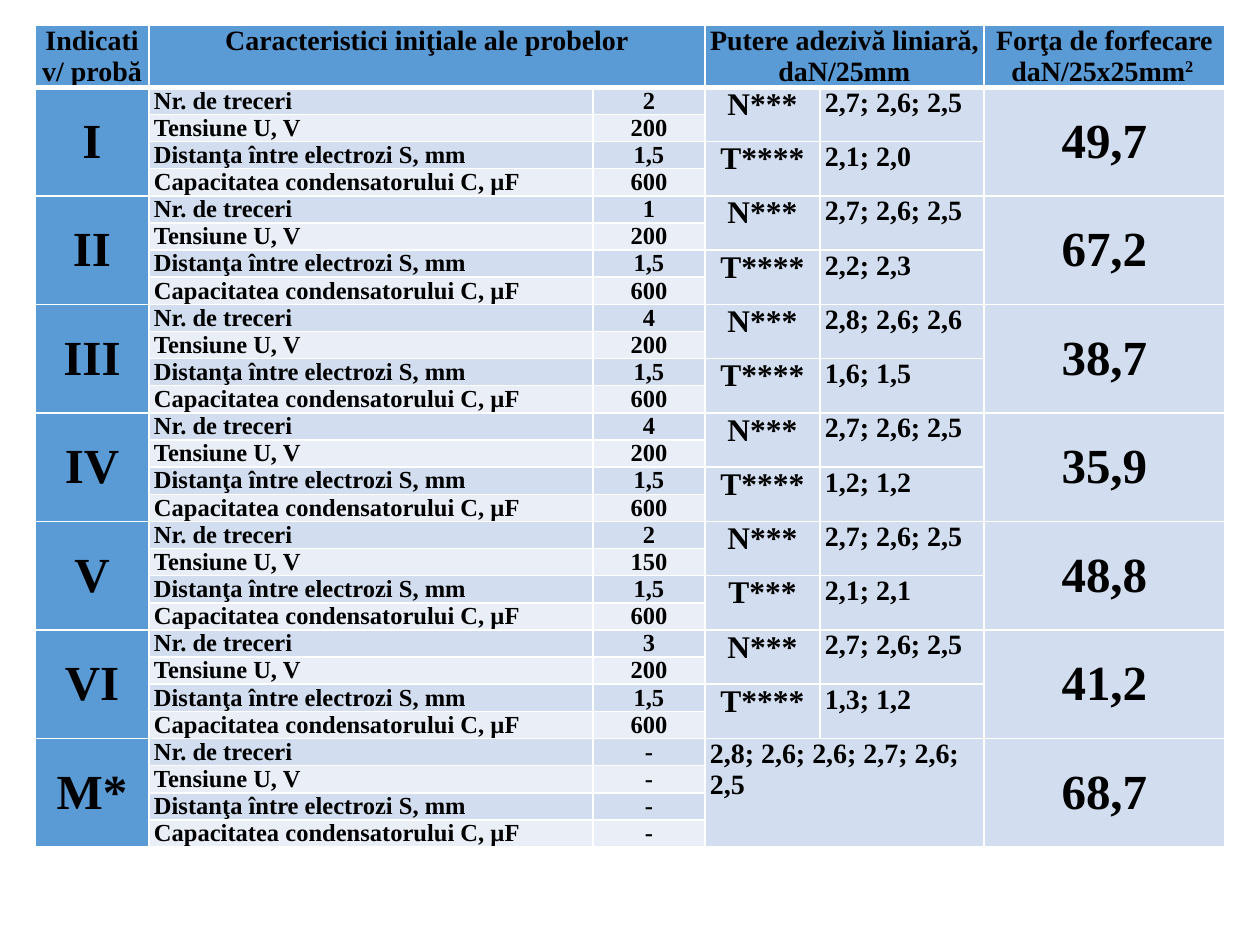
from dataclasses import dataclass, field

from lxml import etree
from pptx import Presentation
from pptx import util as u
from pptx.dml import color
from pptx.enum import text
from pptx.oxml import ns

PX = 914400 // 126
LEFT, TOP, HIGH = 35, 25, 891
COLS = (114, 444, 112, 115, 164, 241)
HEAD_ROW, ROW, STEP = 48, 16, 4
PAD = 5


@dataclass(frozen=True)
class Theme:
    font: str = "Times New Roman"
    ink: str = "000000"
    line: str = "FFFFFF"
    head: str = "5B9BD5"
    bands: tuple = ("D2DEEF", "EAEFF7")
    small: int = 14
    mid: int = 16
    code: int = 18
    big: int = 28


@dataclass(frozen=True)
class Look:
    size: int
    fill: str
    align: text.PP_ALIGN = text.PP_ALIGN.CENTER
    anchor: text.MSO_ANCHOR = text.MSO_ANCHOR.TOP


@dataclass(frozen=True)
class Probe:
    name: str
    passes: str
    force: str
    normal: str
    cross: str = ""
    mark: str = "T****"
    rest: tuple = field(default=("200", "1,5", "600"))


THEME = Theme()
MIDDLE = text.MSO_ANCHOR.MIDDLE
HEAD = Look(THEME.mid, THEME.head)
NAME = Look(THEME.big, THEME.head, anchor=MIDDLE)
FORCE = Look(THEME.big, THEME.bands[0], anchor=MIDDLE)
CODE = Look(THEME.code, THEME.bands[0])
LIST = Look(THEME.mid, THEME.bands[0], text.PP_ALIGN.LEFT)

TRAITS = (
    "Nr. de treceri",
    "Tensiune U, V",
    "Distanţa între electrozi S, mm",
    "Capacitatea condensatorului C, µF",
)
USUAL = "2,7; 2,6; 2,5"
PROBES = (
    Probe("I", "2", "49,7", USUAL, "2,1; 2,0"),
    Probe("II", "1", "67,2", USUAL, "2,2; 2,3"),
    Probe("III", "4", "38,7", "2,8; 2,6; 2,6", "1,6; 1,5"),
    Probe("IV", "4", "35,9", USUAL, "1,2; 1,2"),
    Probe("V", "2", "48,8", USUAL, "2,1; 2,1", "T***", ("150", "1,5", "600")),
    Probe("VI", "3", "41,2", USUAL, "1,3; 1,2"),
    Probe("M*", "-", "68,7", "2,8; 2,6; 2,6; 2,7; 2,6; 2,5", rest=("-",) * 3),
)


def edge(cell, row: int) -> None:
    props = cell._tc.get_or_add_tcPr()
    thick = {"T": row == 1, "B": row == 0}
    for side in "LRTB":
        width = u.Pt(3 if thick.get(side) else 1)
        line = etree.SubElement(props, ns.qn(f"a:ln{side}"), w=str(width))
        fill = etree.SubElement(line, ns.qn("a:solidFill"))
        etree.SubElement(fill, ns.qn("a:srgbClr"), val=THEME.line)


def paint(cell, tint: str) -> None:
    cell.fill.solid()
    cell.fill.fore_color.rgb = color.RGBColor.from_string(tint)


def style(run, size: int) -> None:
    form = {"name": THEME.font, "size": u.Pt(size), "bold": True}
    for key, value in form.items():
        setattr(run.font, key, value)
    run.font.color.rgb = color.RGBColor.from_string(THEME.ink)


def put(table, row: int, col: int, words: str, look: Look,
        rows: int = 1, cols: int = 1, power: str = "") -> None:
    cell = table.cell(row, col)
    if rows * cols > 1:
        cell.merge(table.cell(row + rows - 1, col + cols - 1))
    for r in range(row, row + rows):
        for c in range(col, col + cols):
            paint(table.cell(r, c), look.fill)
    form = {
        "margin_left": PAD * PX, "margin_right": PAD * PX,
        "margin_top": 0, "margin_bottom": 0, "vertical_anchor": look.anchor,
    }
    for key, value in form.items():
        setattr(cell, key, value)
    para = cell.text_frame.paragraphs[0]
    para.alignment = look.align
    run = para.add_run()
    run.text = words
    style(run, look.size)
    if power:
        run = para.add_run()
        run.text = power
        style(run, look.size)
        run._r.get_or_add_rPr().set("baseline", "30000")


def draw_head(table) -> None:
    put(table, 0, 0, "Indicativ/ probă", HEAD)
    put(table, 0, 1, "Caracteristici iniţiale ale probelor", HEAD, cols=2)
    put(table, 0, 3, "Putere adezivă liniară, daN/25mm", HEAD, cols=2)
    put(table, 0, 5, "Forţa de forfecare daN/25x25mm", HEAD, power="2 ")


def draw_probe(table, top: int, probe: Probe) -> None:
    put(table, top, 0, probe.name, NAME, rows=STEP)
    put(table, top, 5, probe.force, FORCE, rows=STEP)
    for i, (trait, value) in enumerate(zip(TRAITS, (probe.passes, *probe.rest))):
        tint = THEME.bands[i % 2]
        put(table, top + i, 1, trait,
            Look(THEME.small, tint, text.PP_ALIGN.JUSTIFY))
        put(table, top + i, 2, value, Look(THEME.small, tint))
    if not probe.cross:
        put(table, top, 3, probe.normal, LIST, rows=STEP, cols=2)
        return
    pairs = (("N***", probe.normal), (probe.mark, probe.cross))
    for i, (mark, value) in enumerate(pairs):
        put(table, top + 2 * i, 3, mark, CODE, rows=2)
        put(table, top + 2 * i, 4, value, LIST, rows=2)


def main() -> None:
    deck = Presentation()
    deck.slide_width, deck.slide_height = 1260 * PX, 945 * PX
    slide = deck.slides.add_slide(deck.slide_layouts[6])
    count = 1 + STEP * len(PROBES)
    frame = slide.shapes.add_table(
        count, len(COLS), LEFT * PX, TOP * PX, sum(COLS) * PX, HIGH * PX)
    table = frame.table
    table.horz_banding = False
    for col, width in zip(table.columns, COLS):
        col.width = width * PX
    for i, row in enumerate(table.rows):
        row.height = (ROW if i else HEAD_ROW) * PX
        for cell in row.cells:
            edge(cell, i)
    frame.height = HIGH * PX
    draw_head(table)
    for i, probe in enumerate(PROBES):
        draw_probe(table, 1 + STEP * i, probe)
    deck.save("out.pptx")


if __name__ == "__main__":
    main()
